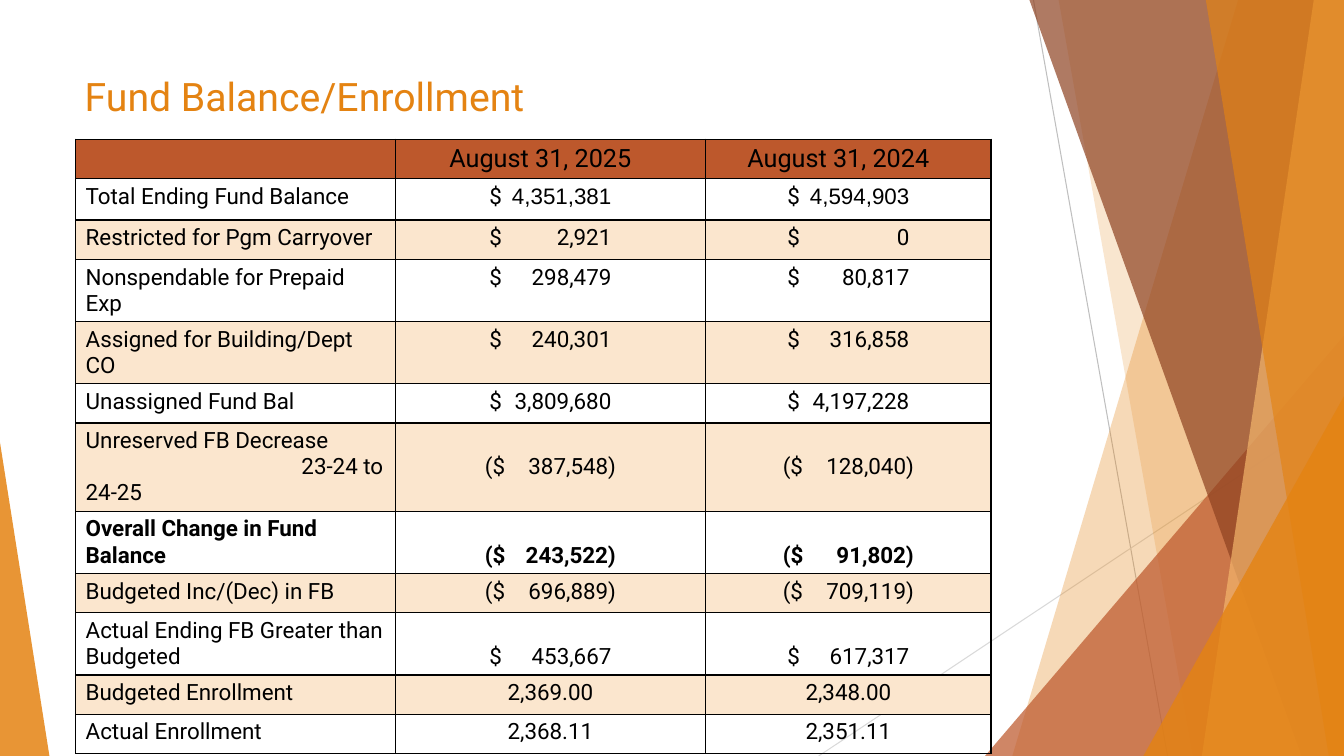
from lxml.etree import SubElement
from pptx import Presentation
from pptx.dml.color import RGBColor
from pptx.enum.shapes import MSO_CONNECTOR, MSO_SHAPE
from pptx.enum.text import MSO_ANCHOR, PP_ALIGN
from pptx.oxml import parse_xml
from pptx.oxml.ns import nsdecls, qn
from pptx.util import Inches, Pt

W, H = 13.33, 7.5
ORANGE, RUST, BROWN, PEACH, CREAM, BLACK = (
    "E48312", "BD582C", "8E4221", "F3B56C", "FBE6CE", "000000")


def paint(fill, color, alpha=100):
    """Fill solidly with a hex colour at the given opacity in percent."""
    fill.solid()
    fill.fore_color.rgb = RGBColor.from_string(color)
    if alpha < 100:
        srgb = fill._xPr.find(".//" + qn("a:srgbClr"))
        SubElement(srgb, qn("a:alpha"), val=str(alpha * 1000))


def add_tab(p, inches, align):
    p._p.get_or_add_pPr().insert(0, parse_xml(
        f'<a:tabLst {nsdecls("a")}><a:tab pos="{Inches(inches)}" algn="{align}"/></a:tabLst>'))


prs = Presentation()
prs.slide_width, prs.slide_height = Inches(W), Inches(H)
s = prs.slides.add_slide(prs.slide_layouts[5])

# Thin background lines
for x1, y1, x2, y2, color in [(10.25, 0, 11.58, H, "BFBFBF"),
                              (W, 4.03, 8.12, H, "D9D9D9")]:
    line = s.shapes.add_connector(MSO_CONNECTOR.STRAIGHT, Inches(x1), Inches(y1),
                                  Inches(x2), Inches(y2))
    paint(line.line.fill, color)
    line.line.width = Pt(0.75)
    SubElement(line._element.spPr, qn("a:effectLst"))

# Facets: bands give top and bottom x and reach the right edge,
# triangles give left, top, width and apex
facets = [
    ("band", (12.28, 10.04), ORANGE, 30),
    ("band", (10.5, 11.83), ORANGE, 20),
    ("triangle", (9.77, 3.33, 3.56, 1), RUST, 72),
    ("band", (10.21, 12.91), BROWN, 70),
    ("band", (13.03, 11.92), PEACH, 70),
    ("band", (11.96, 13.18), ORANGE, 65),
    ("triangle", (11.34, 3.93, 1.99, 1), ORANGE, 80),
    ("triangle", (0, 4.39, 0.49, 0), ORANGE, 85),
]
for kind, place, color, alpha in facets:
    if kind == "band":
        top, bottom = place
        outline = s.shapes.build_freeform(Inches(top), 0)
        outline.add_line_segments([(Inches(x), Inches(y)) for x, y in
                                   [(W, 0), (W, H), (bottom, H)]])
        sp = outline.convert_to_shape()
    else:
        left, top, width, apex = place
        sp = s.shapes.add_shape(MSO_SHAPE.ISOSCELES_TRIANGLE, Inches(left), Inches(top),
                                Inches(width), Inches(H - top))
        sp.adjustments[0] = apex
    sp.shadow.inherit = False
    sp.line.fill.background()
    paint(sp.fill, color, alpha)

# Title
title = s.shapes.title
title.left, title.top, title.width, title.height = map(Inches, (0.74, 0.67, 9.4, 0.56))
tf = title.text_frame
tf.text = "Fund Balance/Enrollment"
tf.vertical_anchor = MSO_ANCHOR.MIDDLE
p = tf.paragraphs[0]
p.alignment = PP_ALIGN.LEFT
p.font.name, p.font.size = "Roboto", Pt(28)
p.font.color.rgb = RGBColor.from_string(ORANGE)

# Table: a tab parts the dollar sign from its right-aligned amount
rows = [
    ("", "August 31, 2025", "August 31, 2024"),
    ("Total Ending Fund Balance", "$\t4,351,381", "$\t4,594,903"),
    ("Restricted for Pgm Carryover", "$\t2,921", "$\t0"),
    ("Nonspendable for Prepaid Exp", "$\t298,479", "$\t80,817"),
    ("Assigned for Building/Dept CO", "$\t240,301", "$\t316,858"),
    ("Unassigned Fund Bal", "$\t3,809,680", "$\t4,197,228"),
    ("Unreserved FB Decrease\v\t23-24 to 24-25", "($\t387,548)", "($\t128,040)"),
    ("Overall Change in Fund Balance", "($\t243,522)", "($\t91,802)"),
    ("Budgeted Inc/(Dec) in FB", "($\t696,889)", "($\t709,119)"),
    ("Actual Ending FB Greater than Budgeted", "$\t453,667", "$\t617,317"),
    ("Budgeted Enrollment", "2,369.00", "2,348.00"),
    ("Actual Enrollment", "2,368.11", "2,351.11"),
]
TOTAL, UNRESERVED, OVERALL, GREATER = 1, 6, 7, 9
col_widths = [3.17, 3.08, 2.83]
tall_rows = {TOTAL: 0.41, 4: 0.56, UNRESERVED: 0.63}
anchors = {UNRESERVED: MSO_ANCHOR.MIDDLE, OVERALL: MSO_ANCHOR.BOTTOM,
           GREATER: MSO_ANCHOR.BOTTOM}

table = s.shapes.add_table(len(rows), len(col_widths), Inches(0.75), Inches(1.38),
                           Inches(sum(col_widths)), Inches(5.11)).table
for c, width in enumerate(col_widths):
    table.columns[c].width = Inches(width)

for r, texts in enumerate(rows):
    table.rows[r].height = Inches(tall_rows.get(r, 0.39))
    for c, text in enumerate(texts):
        cell = table.cell(r, c)
        for side in "LRTB":
            cell._tc.get_or_add_tcPr().append(parse_xml(
                f'<a:ln{side} {nsdecls("a")} w="12700"><a:solidFill>'
                f'<a:srgbClr val="{BLACK}"/></a:solidFill></a:ln{side}>'))
        if r == 0:
            paint(cell.fill, RUST)
        elif r % 2 == 0:
            paint(cell.fill, CREAM)
        else:
            cell.fill.background()

        p = cell.text_frame.paragraphs[0]
        p.font.name, p.font.size = "Roboto", Pt(16 if r else 18)
        p.font.bold = r == OVERALL
        p.font.color.rgb = RGBColor.from_string(BLACK)
        if c == 0:
            p.text = text
            if "\t" in text:
                add_tab(p, 2.14, "l")
            continue

        cell.vertical_anchor = anchors.get(r, MSO_ANCHOR.TOP)
        sign, tab, amount = text.partition("\t")
        if tab:
            span = 1.3 if sign == "($" else 1.21
            cell.margin_left = Inches((col_widths[c] - span) / 2)
            add_tab(p, span, "r")
            p.add_run().text = sign + tab
            run = p.add_run()
            run.text = amount
            if r == TOTAL:
                run.font.name = "Arial"
        else:
            p.text = text
            p.alignment = PP_ALIGN.CENTER
            if r == 0:
                cell.margin_right = Inches(0.3)

prs.save("out.pptx")
